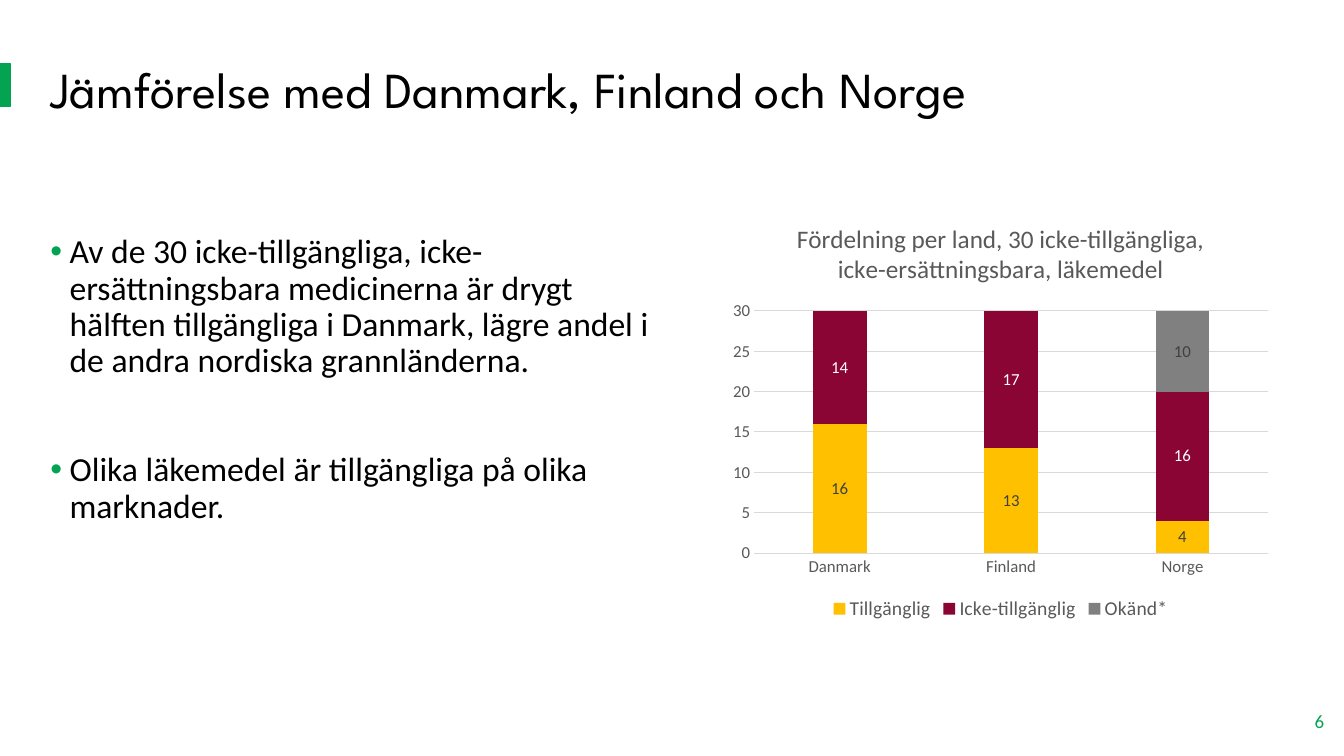
import pptx
import pptx.chart.data
import pptx.dml.color
import pptx.enum.chart
import pptx.enum.shapes
import pptx.enum.text
import pptx.oxml
import pptx.oxml.ns
import pptx.util

COLORS = {
    "green": "04A352",
    "accent": "04A351",
    "black": "000000",
    "gray": "595959",
    "label": "404040",
    "white": "FFFFFF",
    "grid": "D9D9D9",
    "yellow": "FFC000",
    "wine": "8A0434",
    "unknown": "808080",
}
ALIGN = pptx.enum.text.PP_ALIGN
ANCHOR = pptx.enum.text.MSO_ANCHOR


def rgb(name):
    return pptx.dml.color.RGBColor.from_string(COLORS[name])


def style_font(font, size, color, face="Calibri"):
    font.size = pptx.util.Pt(size)
    font.name = face
    font.bold = False
    font.color.rgb = rgb(color)


def write(para, text, size=24, color="black", face="Calibri", align=ALIGN.LEFT, spacing=None, before=None):
    para.alignment = align
    if spacing:
        para.line_spacing = spacing
    if before is not None:
        para.space_before = pptx.util.Pt(before)
    span = para.add_run()
    span.text = text
    style_font(span.font, size, color, face)


def add_bullet(para):
    props = para._p.get_or_add_pPr()
    indent = pptx.util.Inches(0.19)
    props.set("marL", str(indent))
    props.set("indent", str(-indent))
    namespace = pptx.oxml.ns.nsdecls("a")
    for element in (
        f'<a:buClr {namespace}><a:srgbClr val="{COLORS["accent"]}"/></a:buClr>',
        f'<a:buFont {namespace} typeface="Arial"/>',
        f'<a:buChar {namespace} char="•"/>',
    ):
        props.append(pptx.oxml.parse_xml(element))


class SlideBuilder:
    columns = 100
    rows = 100

    def __init__(self, deck):
        self.width = deck.slide_width
        self.height = deck.slide_height
        self.page = deck.slides.add_slide(deck.slide_layouts[1])

    def area(self, column, row, across, down):
        x_unit, y_unit = self.width / self.columns, self.height / self.rows
        return [round(value) for value in (column * x_unit, row * y_unit, across * x_unit, down * y_unit)]

    def prepare(self, box, place, anchor):
        box.left, box.top, box.width, box.height = self.area(*place)
        frame = box.text_frame
        frame.word_wrap = True
        frame.auto_size = pptx.enum.text.MSO_AUTO_SIZE.NONE
        frame.vertical_anchor = anchor
        return frame

    def bar(self, place, color):
        shape = self.page.shapes.add_shape(pptx.enum.shapes.MSO_SHAPE.RECTANGLE, *self.area(*place))
        shape.shadow.inherit = False
        shape.fill.solid()
        shape.fill.fore_color.rgb = rgb(color)
        shape.line.color.rgb = rgb(color)
        shape.line.width = pptx.util.Pt(1)

    def title(self, place, text):
        frame = self.prepare(self.page.shapes.title, place, ANCHOR.MIDDLE)
        write(frame.paragraphs[0], text, size=36, face="League Spartan", spacing=0.9)

    def bullets(self, place, texts, gap):
        frame = self.prepare(self.page.placeholders[1], place, ANCHOR.TOP)
        for index, text in enumerate(texts):
            para = frame.add_paragraph() if index else frame.paragraphs[0]
            add_bullet(para)
            write(para, text, spacing=0.9, before=gap if index else 0)

    def page_number(self, place, text):
        box = self.page.shapes.add_textbox(*self.area(*place))
        frame = self.prepare(box, place, ANCHOR.MIDDLE)
        write(frame.paragraphs[0], text, size=13.5, color="accent", align=ALIGN.RIGHT)

    def stacked_chart(self, place, title, categories, series):
        data = pptx.chart.data.CategoryChartData()
        data.categories = categories
        for name, values, fill, label in series:
            data.add_series(name, values)
        kind = pptx.enum.chart.XL_CHART_TYPE.COLUMN_STACKED
        chart = self.page.shapes.add_chart(kind, *self.area(*place), data).chart
        style_font(chart.font, 10, "black")
        chart.has_title = True
        write(chart.chart_title.text_frame.paragraphs[0], title, size=18, color="gray", align=ALIGN.CENTER)
        chart.chart_title.include_in_layout = False
        chart.has_legend = True
        chart.legend.position = pptx.enum.chart.XL_LEGEND_POSITION.BOTTOM
        chart.legend.include_in_layout = False
        style_font(chart.legend.font, 14, "gray")
        self.format_axes(chart)
        plot = chart.plots[0]
        plot.gap_width = 219
        plot.overlap = 100
        plot.vary_by_categories = False
        for bars, (name, values, fill, label) in zip(plot.series, series):
            bars.format.fill.solid()
            bars.format.fill.fore_color.rgb = rgb(fill)
            labels = bars.data_labels
            labels.show_value = True
            labels.number_format = "0;;"
            labels.number_format_is_linked = False
            style_font(labels.font, 12, label)

    def format_axes(self, chart):
        for axis in (chart.category_axis, chart.value_axis):
            axis.major_tick_mark = pptx.enum.chart.XL_TICK_MARK.NONE
            axis.minor_tick_mark = pptx.enum.chart.XL_TICK_MARK.NONE
            style_font(axis.tick_labels.font, 12, "gray")
        chart.value_axis.minimum_scale = 0
        chart.value_axis.maximum_scale = 30
        chart.value_axis.major_unit = 5
        chart.value_axis.format.line.fill.background()
        chart.value_axis.has_major_gridlines = True
        for line in (chart.category_axis.format.line, chart.value_axis.major_gridlines.format.line):
            line.color.rgb = rgb("grid")
            line.width = pptx.util.Pt(0.75)


def main():
    deck = pptx.Presentation()
    deck.slide_width = pptx.util.Inches(13.33)
    deck.slide_height = pptx.util.Inches(7.5)
    slide = SlideBuilder(deck)
    slide.bar((0, 8.4, 0.75, 5.73), "green")
    slide.title((3, 7.73, 85, 8.93), "Jämförelse med Danmark, Finland och Norge")
    slide.bullets(
        (3, 30.4, 46.36, 67.33),
        [
            "Av de 30 icke-tillgängliga, icke-ersättningsbara medicinerna är drygt hälften "
            "tillgängliga i Danmark, lägre andel i de andra nordiska grannländerna.",
            "Olika läkemedel är tillgängliga på olika marknader.",
        ],
        gap=52,
    )
    slide.page_number((93.17, 92.67, 6.08, 5.33), "6")
    slide.stacked_chart(
        (53.71, 26.8, 41.48, 55.87),
        "Fördelning per land, 30 icke-tillgängliga, icke-ersättningsbara, läkemedel",
        ["Danmark", "Finland", "Norge"],
        [
            ("Tillgänglig", (16, 13, 4), "yellow", "label"),
            ("Icke-tillgänglig", (14, 17, 16), "wine", "white"),
            ("Okänd*", (0, 0, 10), "unknown", "label"),
        ],
    )
    deck.save("out.pptx")


if __name__ == "__main__":
    main()
